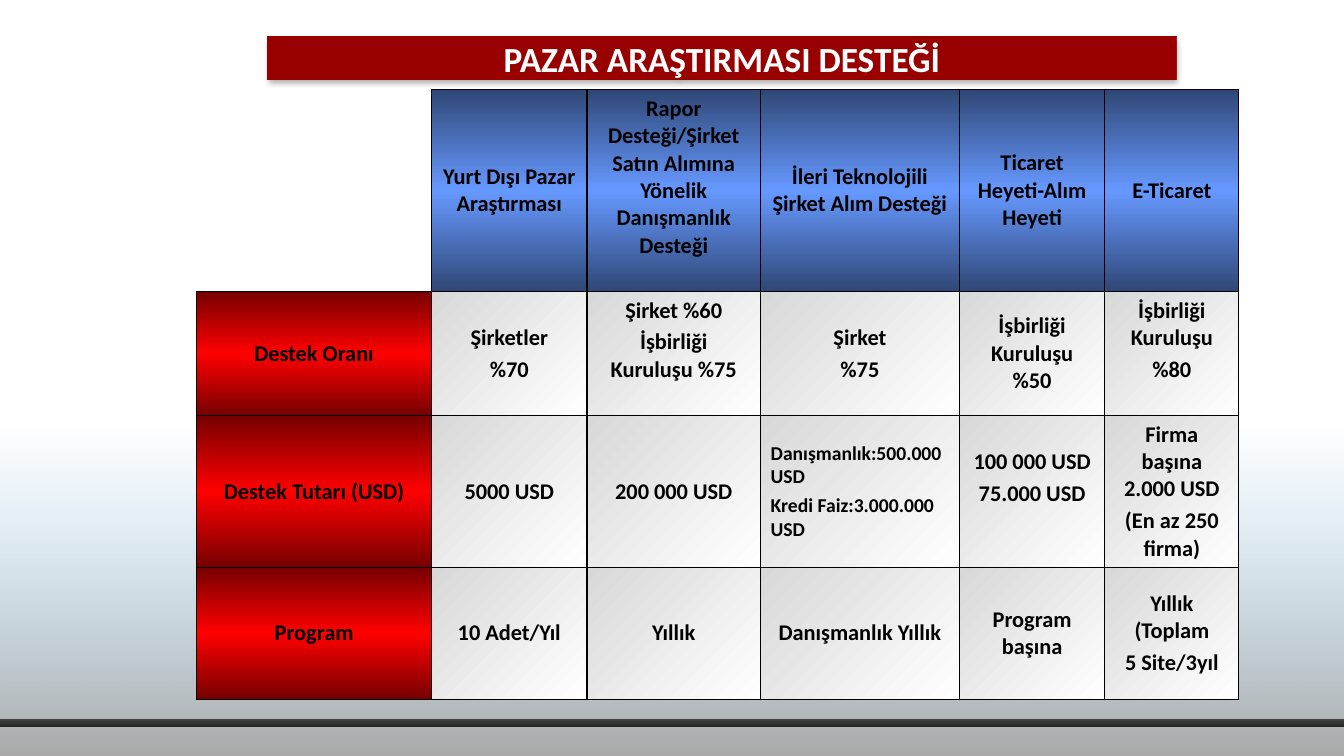
from lxml import etree
from pptx import Presentation
from pptx.dml.color import RGBColor
from pptx.enum import shapes, text
from pptx.oxml import ns, parse_xml
from pptx.util import Pt

BLUE = [(0, "2F4776", 100), (50, "6699FF", 100), (100, "2F4776", 100)]
RED = [(0, "760000", 100), (50, "FF0000", 100), (100, "760000", 100)]
GREY = [(0, "D8D8D8", 100), (100, "FFFFFF", 100)]
HAZE = [(0, "6CB9E7", 0), (100, "808080", 67)]
CHARCOAL = [(0, "262626", 100), (50, "363636", 100), (100, "404040", 100)]

COLUMNS = [167.9, 111, 124, 142, 104, 95.7]
ROWS = [144.3, 88.6, 108.2, 94.3]
SUPPORT = [
    ["", "Yurt Dışı Pazar Araştırması",
     "Rapor Desteği/Şirket Satın Alımına Yönelik Danışmanlık Desteği",
     "İleri Teknolojili Şirket Alım Desteği", "Ticaret Heyeti-Alım Heyeti", "E-Ticaret"],
    ["Destek Oranı", "Şirketler\n%70", "Şirket %60\nİşbirliği Kuruluşu %75",
     "Şirket\n%75", "İşbirliği Kuruluşu %50", "İşbirliği Kuruluşu\n%80"],
    ["Destek Tutarı (USD)", "5000 USD", "200 000 USD",
     "Danışmanlık:500.000 USD\nKredi Faiz:3.000.000 USD", "100 000 USD\n75.000 USD",
     "Firma başına 2.000 USD\n(En az 250 firma)"],
    ["Program", "10 Adet/Yıl", "Yıllık", "Danışmanlık Yıllık", "Program başına",
     "Yıllık (Toplam\n5 Site/3yıl"],
]
RAISED = {(0, 2), (1, 2), (1, 5), (2, 4)}
SMALL = (2, 3)


def color(value):
    """Turn a hex string into a colour."""
    return RGBColor.from_string(value)


def element(markup):
    """Parse one drawing element."""
    return parse_xml(markup.replace(">", f" {ns.nsdecls('a')}>", 1))


def gradient(stops, angle):
    """Build a linear gradient from (position, colour, opacity) stops."""
    marks = "".join(
        f'<a:gs pos="{place * 1000}"><a:srgbClr val="{value}">'
        f'<a:alpha val="{opacity * 1000}"/></a:srgbClr></a:gs>'
        for place, value, opacity in stops)
    return element(f'<a:gradFill rotWithShape="1"><a:gsLst>{marks}</a:gsLst>'
                   f'<a:lin ang="{angle * 60000}" scaled="0"/></a:gradFill>')


def style(para, size, value, align):
    """Format a bold Calibri paragraph."""
    para.alignment = align
    para.font.name = "Calibri"
    para.font.size = Pt(size)
    para.font.bold = True
    para.font.color.rgb = color(value)


def add_band(page, left, top, width, height, stops, angle):
    """Add a gradient rectangle of the backdrop."""
    band = page.shapes.add_shape(shapes.MSO_SHAPE.RECTANGLE,
                                 Pt(left), Pt(top), Pt(width), Pt(height))
    band.shadow.inherit = False
    band.line.fill.background()
    band.fill.background()
    properties = band._element.spPr
    properties.replace(properties.find(ns.qn("a:noFill")), gradient(stops, angle))


def add_title(page, left, top, width, height):
    """Place the red title bar with its soft shadow."""
    box = page.shapes.title
    box.left, box.top, box.width, box.height = Pt(left), Pt(top), Pt(width), Pt(height)
    box.fill.solid()
    box.fill.fore_color.rgb = color("990000")
    box._element.spPr.append(element(
        f'<a:effectLst><a:outerShdw blurRad="{Pt(3.5)}" dist="{Pt(2.2)}" dir="5400000">'
        '<a:srgbClr val="000000"><a:alpha val="32000"/></a:srgbClr></a:outerShdw>'
        f'<a:softEdge rad="{Pt(1)}"/></a:effectLst>'))
    frame = box.text_frame
    frame.text = "PAZAR ARAŞTIRMASI DESTEĞİ"
    frame.auto_size = text.MSO_AUTO_SIZE.NONE
    frame.vertical_anchor = text.MSO_ANCHOR.MIDDLE
    frame.margin_top = frame.margin_bottom = 0
    style(frame.paragraphs[0], 25.2, "FFFFFF", text.PP_ALIGN.CENTER)


def finish_cell(cell, hidden, fill):
    """Draw the borders of a cell, except hidden sides, and its fill."""
    properties = cell._tc.get_or_add_tcPr()
    for side in "LRTB":
        paint = ("<a:noFill/>" if side in hidden else
                 '<a:solidFill><a:srgbClr val="000000"/></a:solidFill>')
        properties.append(element(f'<a:ln{side} w="{Pt(1)}">{paint}</a:ln{side}>'))
    properties.append(fill)


def fill_cell(cell, row, column):
    """Write and format one cell of the support table."""
    cell.text = SUPPORT[row][column]
    cell.vertical_anchor = text.MSO_ANCHOR.MIDDLE
    cell.margin_left = cell.margin_right = Pt(7.2)
    cell.margin_top = Pt(3.6)
    cell.margin_bottom = Pt(23 if (row, column) in RAISED else 3.6)
    small = (row, column) == SMALL
    for index, para in enumerate(cell.text_frame.paragraphs):
        if index:
            para.space_before = Pt(3.2)
        style(para, 14 if small else 16, "000000",
              text.PP_ALIGN.LEFT if small else text.PP_ALIGN.CENTER)
    if row == column == 0:
        finish_cell(cell, "LT", etree.Element(ns.qn("a:noFill")))
    elif row == 0:
        finish_cell(cell, "", gradient(BLUE, 90))
    elif column == 0:
        finish_cell(cell, "", gradient(RED, 90))
    else:
        finish_cell(cell, "", gradient(GREY, 45))


def add_support_table(page, left, top):
    """Place the table of support rates, amounts and programmes."""
    table = page.shapes.add_table(len(ROWS), len(COLUMNS), Pt(left), Pt(top),
                                  Pt(sum(COLUMNS)), Pt(sum(ROWS))).table
    table.first_row = table.horz_banding = False
    for column, width in zip(table.columns, COLUMNS):
        column.width = Pt(width)
    for row, height in zip(table.rows, ROWS):
        row.height = Pt(height)
    for row in range(len(ROWS)):
        for column in range(len(COLUMNS)):
            fill_cell(table.cell(row, column), row, column)


def main():
    """Build and save the deck."""
    deck = Presentation()
    deck.slide_width, deck.slide_height = Pt(960), Pt(540)
    page = deck.slides.add_slide(deck.slide_layouts[5])
    add_band(page, 0, 304, 960, 236, HAZE, 90)
    add_band(page, 0, 513.5, 960, 5.8, CHARCOAL, 270)
    add_title(page, 191, 26, 649.5, 31)
    add_support_table(page, 140.4, 64)
    deck.save("out.pptx")


if __name__ == "__main__":
    main()
